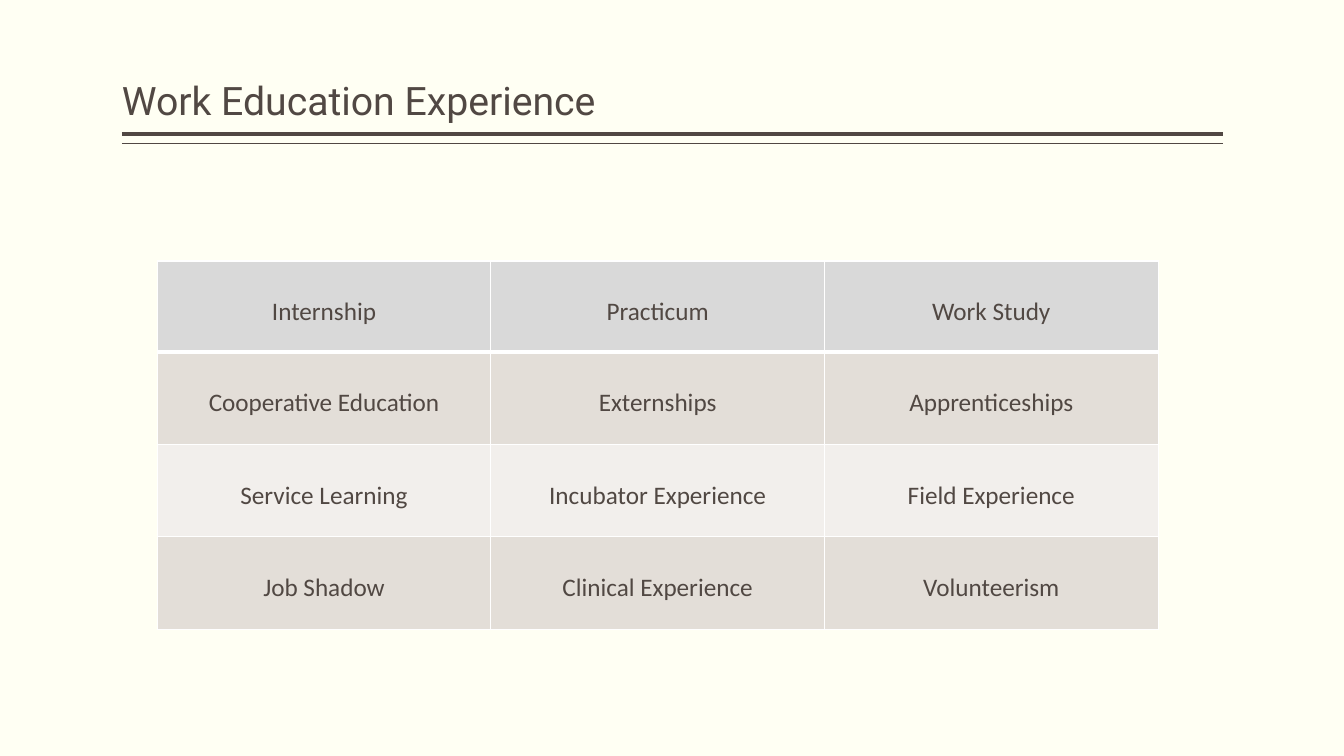
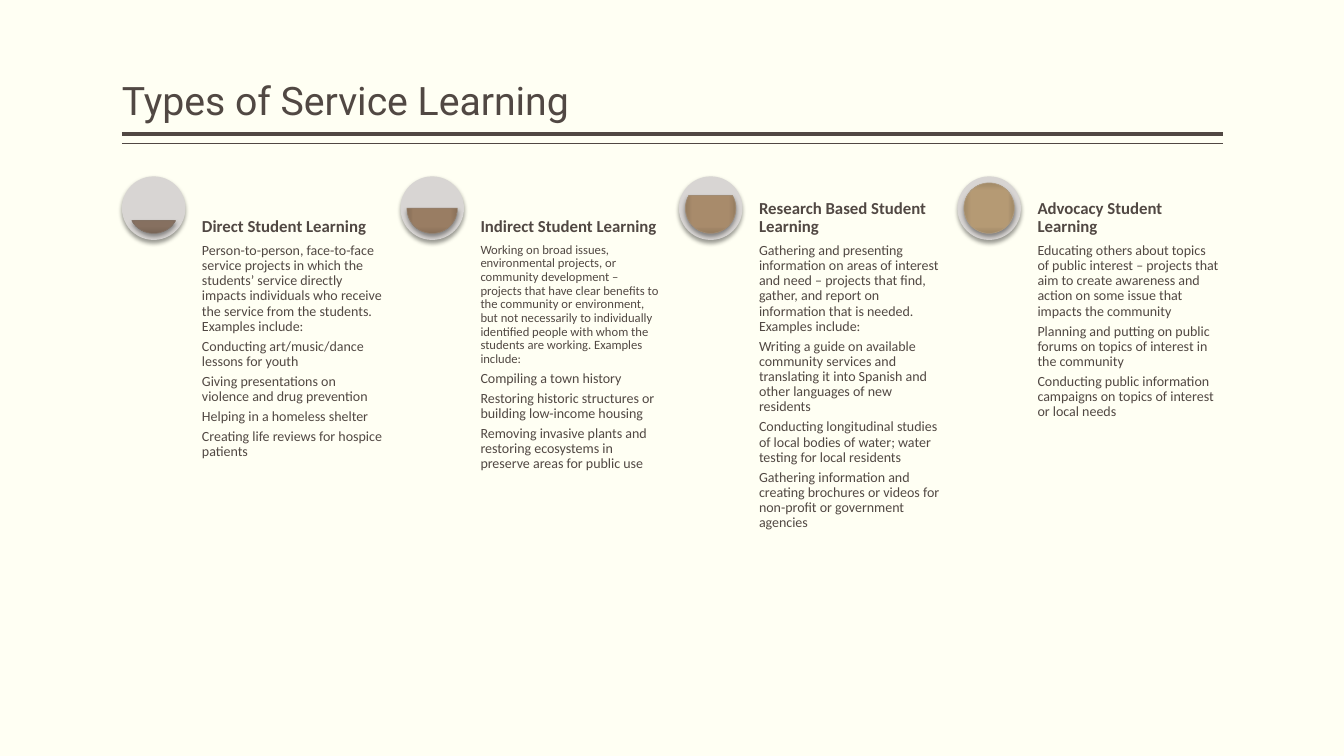
from dataclasses import dataclass

from pptx import Presentation
from pptx.dml.color import RGBColor
from pptx.enum import shapes, text
from pptx.oxml import ns, parse_xml
from pptx.util import Pt

INK = RGBColor(0x51, 0x48, 0x43)
CREAM = RGBColor(0xFF, 0xFF, 0xF3)
WHITE = RGBColor(0xFF, 0xFF, 0xFF)
HEAD = RGBColor(0xD9, 0xD9, 0xD9)
BANDS = (RGBColor(0xE3, 0xDE, 0xD8), RGBColor(0xF2, 0xEF, 0xEC))
DISC = RGBColor(0xD8, 0xD5, 0xD3)

LEFT, WIDTH = 87.1, 786.2
TOP, DIAL, INSET = 126, 45.4, 4.7
TEXT_X, TEXT_W = 54.8, 134.6
PITCH = (WIDTH - TEXT_X - TEXT_W) / 3
BODY_H = 191.5

GRID = (
    ("Internship", "Practicum", "Work Study"),
    ("Cooperative Education", "Externships", "Apprenticeships"),
    ("Service Learning", "Incubator Experience", "Field Experience"),
    ("Job Shadow", "Clinical Experience", "Volunteerism"),
)


@dataclass(frozen=True)
class Kind:
    title: str
    arc: tuple[float, float]  # chord ends, in degrees
    shades: tuple[str, str, str]
    edge: RGBColor
    lines: tuple[str, ...]
    lead: float = 10  # size of the first paragraph


KINDS = (
    Kind("Direct Student Learning", (30, 150), ("877161", "867060", "776455"),
         RGBColor(0x82, 0x72, 0x66), (
        "Person-to-person, face-to-face service projects in which the students’ service directly "
        "impacts individuals who receive the service from the students. Examples include:",
        "Conducting art/music/dance lessons for youth",
        "Giving presentations on violence and drug prevention",
        "Helping in a homeless shelter",
        "Creating life reviews for hospice patients")),
    Kind("Indirect Student Learning", (0, 180), ("9B7E64", "997D63", "886F58"),
         RGBColor(0x93, 0x7F, 0x6B), (
        "Working on broad issues, environmental projects, or community development – projects "
        "that have clear benefits to the community or environment, but not necessarily to "
        "individually identified people with whom the students are working. Examples include:",
        "Compiling a town history",
        "Restoring historic structures or building low-income housing",
        "Removing invasive plants and restoring ecosystems in preserve areas for public use"),
         lead=9),
    Kind("Research Based Student Learning", (330, 210), ("A98D6C", "A88B6B", "957C5F"),
         RGBColor(0xA1, 0x8C, 0x74), (
        "Gathering and presenting information on areas of interest and need – projects that "
        "find, gather, and report on information that is needed. Examples include:",
        "Writing a guide on available community services and translating it into Spanish and "
        "other languages of new residents",
        "Conducting longitudinal studies of local bodies of water; water testing for local "
        "residents",
        "Gathering information and creating brochures or videos for non-profit or government "
        "agencies")),
    Kind("Advocacy Student Learning", (270, 270), ("B79B75", "B59A74", "A18967"),
         RGBColor(0xAE, 0x9A, 0x7E), (
        "Educating others about topics of public interest – projects that aim to create "
        "awareness and action on some issue that impacts the community",
        "Planning and putting on public forums on topics of interest in the community",
        "Conducting public information campaigns on topics of interest or local needs")),
)


def style(par, size: float, name: str = "Calibri", bold: bool = False) -> None:
    font = par.font
    font.name, font.size, font.bold = name, Pt(size), bold
    font.color.rgb = INK


def add_rule(slide, y: float, weight: float) -> None:
    line = slide.shapes.add_connector(
        shapes.MSO_CONNECTOR.STRAIGHT, Pt(LEFT), Pt(y), Pt(LEFT + WIDTH), Pt(y))
    line.line.color.rgb = INK
    line.line.width = Pt(weight)
    line._element.spPr.append(parse_xml(f"<a:effectLst {ns.nsdecls('a')}/>"))


def add_slide(prs, title: str):
    """Add a slide with the shared title and double rule."""
    slide = prs.slides.add_slide(prs.slide_layouts[5])
    add_rule(slide, 95.8, 3)
    add_rule(slide, 102.6, 1)
    head = slide.shapes.title
    head.left, head.top, head.width, head.height = Pt(LEFT), Pt(5.8), Pt(WIDTH), Pt(86.4)
    frame = head.text_frame
    frame.text = title
    frame.auto_size = text.MSO_AUTO_SIZE.NONE
    frame.vertical_anchor = text.MSO_ANCHOR.BOTTOM
    frame.margin_left = frame.margin_right = 0
    frame.margin_top = frame.margin_bottom = Pt(3.6)
    par = frame.paragraphs[0]
    par.alignment = text.PP_ALIGN.LEFT
    par.line_spacing = 0.9
    style(par, 28, "Roboto")
    return slide


def set_edges(cell, head: bool) -> None:
    """Give a cell white borders, with a thick one below the head row."""
    props = cell._tc.get_or_add_tcPr()
    weights = {"L": 1, "R": 1, "T": 1, "B": 3 if head else 1}
    for spot, (side, weight) in enumerate(weights.items()):
        props.insert(spot, parse_xml(
            f'<a:ln{side} {ns.nsdecls("a")} w="{Pt(weight)}"><a:solidFill>'
            f'<a:srgbClr val="{WHITE}"/></a:solidFill></a:ln{side}>'))


def add_grid(slide) -> None:
    heights = (65, 66, 66, 66)
    table = slide.shapes.add_table(
        len(GRID), 3, Pt(112.3), Pt(186.5), Pt(715), Pt(sum(heights))).table
    for col in table.columns:
        col.width = Pt(715 / 3)
    for i, (row, names) in enumerate(zip(table.rows, GRID)):
        row.height = Pt(heights[i])
        for cell, name in zip(row.cells, names):
            cell.text = name
            cell.fill.solid()
            cell.fill.fore_color.rgb = BANDS[(i - 1) % 2] if i else HEAD
            set_edges(cell, i == 0)
            par = cell.text_frame.paragraphs[0]
            par.alignment = text.PP_ALIGN.CENTER
            par.line_spacing = 2.0
            style(par, 18)


def add_round(slide, preset, x: float, y: float, size: float):
    """Add a square-boxed shape with a soft shadow below it."""
    shape = slide.shapes.add_shape(preset, Pt(x), Pt(y), Pt(size), Pt(size))
    shape.shadow.inherit = False
    shape._element.spPr.find(ns.qn("a:effectLst")).append(parse_xml(
        f'<a:outerShdw {ns.nsdecls("a")} blurRad="{Pt(3.1)}" dist="{Pt(2)}" dir="5400000" '
        'rotWithShape="0"><a:srgbClr val="000000"><a:alpha val="38000"/></a:srgbClr>'
        '</a:outerShdw>'))
    return shape


def add_dial(slide, kind: Kind, x: float) -> None:
    disc = add_round(slide, shapes.MSO_SHAPE.OVAL, x, TOP, DIAL)
    disc.fill.solid()
    disc.fill.fore_color.rgb = DISC
    disc.line.fill.background()
    level = add_round(
        slide, shapes.MSO_SHAPE.CHORD, x + INSET, TOP + INSET, DIAL - 2 * INSET)
    for i, angle in enumerate(kind.arc):
        level.adjustments[i] = angle * 0.6
    level.line.color.rgb = kind.edge
    level.line.width = Pt(0.5)
    stops = "".join(
        f'<a:gs pos="{spot}000"><a:srgbClr val="{shade}"/></a:gs>'
        for spot, shade in zip((0, 71, 100), kind.shades))
    level._element.spPr.find(ns.qn("a:prstGeom")).addnext(parse_xml(
        f'<a:gradFill {ns.nsdecls("a")} rotWithShape="1"><a:gsLst>{stops}</a:gsLst>'
        '<a:path path="rect"><a:fillToRect l="50000" t="50000" r="50000" b="50000"/>'
        '</a:path></a:gradFill>'))


def add_text(slide, x: float, y: float, height: float, lines: tuple[str, ...], anchor):
    frame = slide.shapes.add_textbox(Pt(x), Pt(y), Pt(TEXT_W), Pt(height)).text_frame
    frame.word_wrap = True
    frame.vertical_anchor = anchor
    frame.margin_left = frame.margin_right = Pt(2.4)
    frame.margin_top = frame.margin_bottom = Pt(2.4)
    frame.text = "\n".join(lines)
    for par in frame.paragraphs:
        par.line_spacing = 0.9
    return frame.paragraphs


def add_kind(slide, kind: Kind, x: float) -> None:
    add_dial(slide, kind, x)
    left = x + TEXT_X
    pars = add_text(slide, left, TOP + DIAL, BODY_H, kind.lines, text.MSO_ANCHOR.TOP)
    for i, par in enumerate(pars):
        par.space_after = Pt(3.5)
        style(par, 10 if i else kind.lead)
    head = add_text(slide, left, TOP, DIAL, (kind.title,), text.MSO_ANCHOR.BOTTOM)
    style(head[0], 12, bold=True)


def main() -> None:
    prs = Presentation()
    prs.slide_width, prs.slide_height = Pt(960), Pt(540)
    back = prs.slide_master.background.fill
    back.solid()
    back.fore_color.rgb = CREAM

    add_grid(add_slide(prs, "Work Education Experience"))
    slide = add_slide(prs, "Types of Service Learning")
    for i, kind in enumerate(KINDS):
        add_kind(slide, kind, LEFT + i * PITCH)
    prs.save("out.pptx")


if __name__ == "__main__":
    main()
